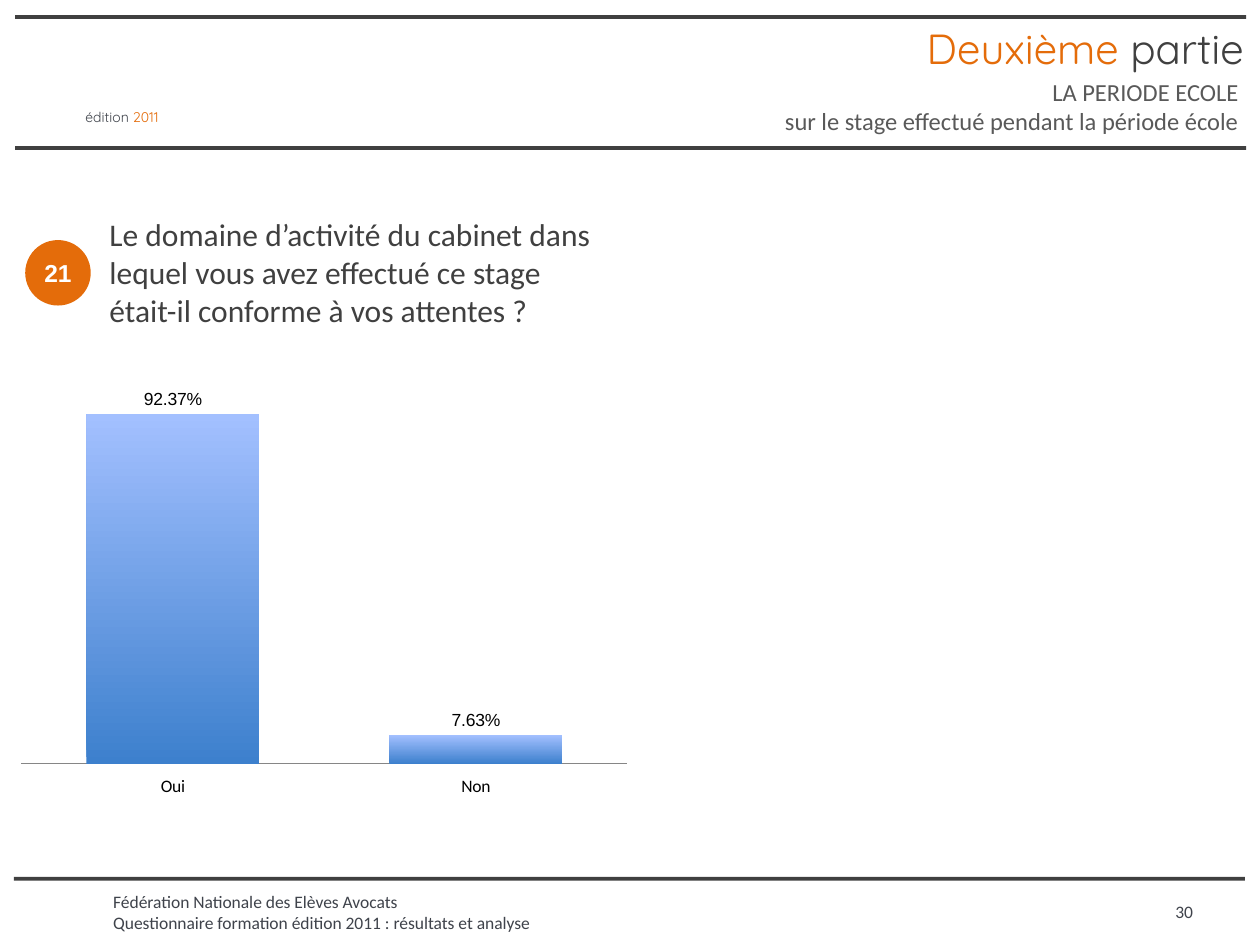
from lxml.etree import SubElement
from pptx import Presentation
from pptx.chart.data import CategoryChartData
from pptx.dml.color import RGBColor
from pptx.enum.chart import XL_CHART_TYPE, XL_LABEL_POSITION, XL_TICK_LABEL_POSITION, XL_TICK_MARK
from pptx.enum.shapes import MSO_SHAPE
from pptx.enum.text import MSO_ANCHOR, MSO_AUTO_SIZE, PP_ALIGN
from pptx.oxml.ns import qn
from pptx.util import Inches, Pt

ORANGE = "E46C0A"
DARK = "404040"
SLATE = "3F434B"
GRAY = "595959"
WHITE = "FFFFFF"
BLACK = "000000"


def color(value):
    return RGBColor.from_string(value)


def place(shape, left, top, width, height):
    shape.left, shape.top = Inches(left), Inches(top)
    shape.width, shape.height = Inches(width), Inches(height)


def write(shape, lines, size, font="Calibri", fill=DARK, bold=False,
          align=PP_ALIGN.LEFT, anchor=MSO_ANCHOR.TOP, wrap=True):
    frame = shape.text_frame
    frame.auto_size = MSO_AUTO_SIZE.NONE
    frame.word_wrap = wrap
    frame.vertical_anchor = anchor
    for index, line in enumerate(lines):
        paragraph = frame.add_paragraph() if index else frame.paragraphs[0]
        paragraph.alignment = align
        for words, shade in [(line, fill)] if isinstance(line, str) else line:
            run = paragraph.add_run()
            run.text = words
            run.font.size = Pt(size)
            run.font.name = font
            run.font.bold = bold
            run.font.color.rgb = color(shade)


def add_text(slide, box, lines, size, **style):
    label = slide.shapes.add_textbox(*map(Inches, box))
    write(label, lines, size, **style)


def add_solid(slide, kind, box, fill):
    solid = slide.shapes.add_shape(kind, *map(Inches, box))
    solid.shadow.inherit = False
    solid.fill.solid()
    solid.fill.fore_color.rgb = color(fill)
    solid.line.fill.background()
    return solid


def add_rule(slide, left, top, width):
    add_solid(slide, MSO_SHAPE.RECTANGLE, (left, top, width, 0.03), DARK)


def add_header(slide, left, top, width, height):
    for rule_top in (top, top + height):
        add_rule(slide, left, rule_top, width)
    add_text(slide, (left + 0.46, top + 0.69, 0.86, 0.24),
             [[("édition ", SLATE), ("2011", ORANGE)]], 8, font="Quicksand", wrap=False)
    title = slide.shapes.title
    place(title, left + 1.87, top + 0.01, 7.98, 0.5)
    write(title, [[("Deuxième ", ORANGE), ("partie", DARK)]], 24,
          font="Quicksand", align=PP_ALIGN.RIGHT)
    add_text(slide, (left + 5.97, top + 0.44, 3.84, 0.57),
             ["LA PERIODE ECOLE", "sur le stage effectué pendant la période école"],
             14, fill=GRAY, align=PP_ALIGN.RIGHT, wrap=False)


def add_question(slide, left, top, width, height):
    diameter = 0.52
    badge = add_solid(slide, MSO_SHAPE.OVAL,
                      (left, top + (height - diameter) / 2, diameter, diameter), ORANGE)
    badge.text_frame.margin_left = badge.text_frame.margin_right = Inches(0.04)
    write(badge, ["21"], 14, font="Arial", fill=WHITE, bold=True,
          align=PP_ALIGN.CENTER, anchor=MSO_ANCHOR.MIDDLE)
    add_text(slide, (left + 0.57, top, width - 0.57, height),
             ["Le domaine d’activité du cabinet dans lequel vous avez effectué "
              "ce stage était-il conforme à vos attentes ?"], 18)


def set_plot_layout(chart, **fractions):
    plot_area = chart.element.find(".//" + qn("c:plotArea"))
    for existing in plot_area.findall(qn("c:layout")):
        plot_area.remove(existing)
    layout = SubElement(plot_area, qn("c:layout"))
    plot_area.insert(0, layout)
    manual = SubElement(layout, qn("c:manualLayout"))
    settings = {"layoutTarget": "inner", "xMode": "edge", "yMode": "edge", **fractions}
    for name, value in settings.items():
        SubElement(manual, qn("c:" + name)).set("val", str(value))


def add_answers(slide, left, top, width, height):
    answers = CategoryChartData(number_format="0.00%")
    answers.categories = ["Oui", "Non"]
    answers.add_series("Series 1", (0.9237, 0.0763))
    chart = slide.shapes.add_chart(XL_CHART_TYPE.COLUMN_CLUSTERED,
                                   *map(Inches, (left, top, width, height)), answers).chart
    chart.has_legend = chart.has_title = False
    chart.font.name = "Arial"
    chart.font.size = Pt(10)
    chart.font.color.rgb = color(BLACK)
    set_plot_layout(chart, x=0.02, y=0.02, w=0.96, h=0.9)

    categories = chart.category_axis
    categories.major_tick_mark = XL_TICK_MARK.NONE
    categories.tick_label_position = XL_TICK_LABEL_POSITION.LOW
    categories.tick_labels.font.name = "Calibri"
    categories.tick_labels.font.size = Pt(10)
    categories.format.line.color.rgb = color("868686")
    percentages = chart.value_axis
    percentages.minimum_scale, percentages.maximum_scale = 0, 1
    percentages.has_major_gridlines = False
    percentages.visible = False

    columns = chart.plots[0]
    columns.gap_width = 75
    columns.vary_by_categories = False
    columns.has_data_labels = True
    labels = columns.data_labels
    labels.show_value = True
    labels.number_format = "0.00%"
    labels.number_format_is_linked = False
    labels.position = XL_LABEL_POSITION.OUTSIDE_END
    labels.font.name = "Arial"
    labels.font.size = Pt(10)
    gradient = columns.series[0].format.fill
    gradient.gradient()
    gradient.gradient_angle = 90
    for stop, shade in zip(gradient.gradient_stops, ("3D80CD", "A3C0FF")):
        stop.color.rgb = color(shade)


def add_footer(slide, left, top, width):
    add_rule(slide, left, top, width)
    add_text(slide, (left + 0.69, top + 0.06, 6.48, 0.44),
             ["Fédération Nationale des Elèves Avocats",
              "Questionnaire formation édition 2011 : résultats et analyse"], 10, fill=SLATE)
    add_text(slide, (left + 9.12, top + 0.14, 0.64, 0.27), ["30"], 10, fill=SLATE)


def main():
    deck = Presentation()
    deck.slide_width, deck.slide_height = Inches(10), Inches(7.5)
    slide = deck.slides.add_slide(deck.slide_layouts[5])
    add_header(slide, 0.12, 0.12, 9.77, 1.04)
    add_question(slide, 0.2, 1.66, 4.75, 1.01)
    add_answers(slide, 0.07, 2.99, 5.01, 3.34)
    add_footer(slide, 0.11, 6.96, 9.77)
    deck.save("out.pptx")


if __name__ == "__main__":
    main()
